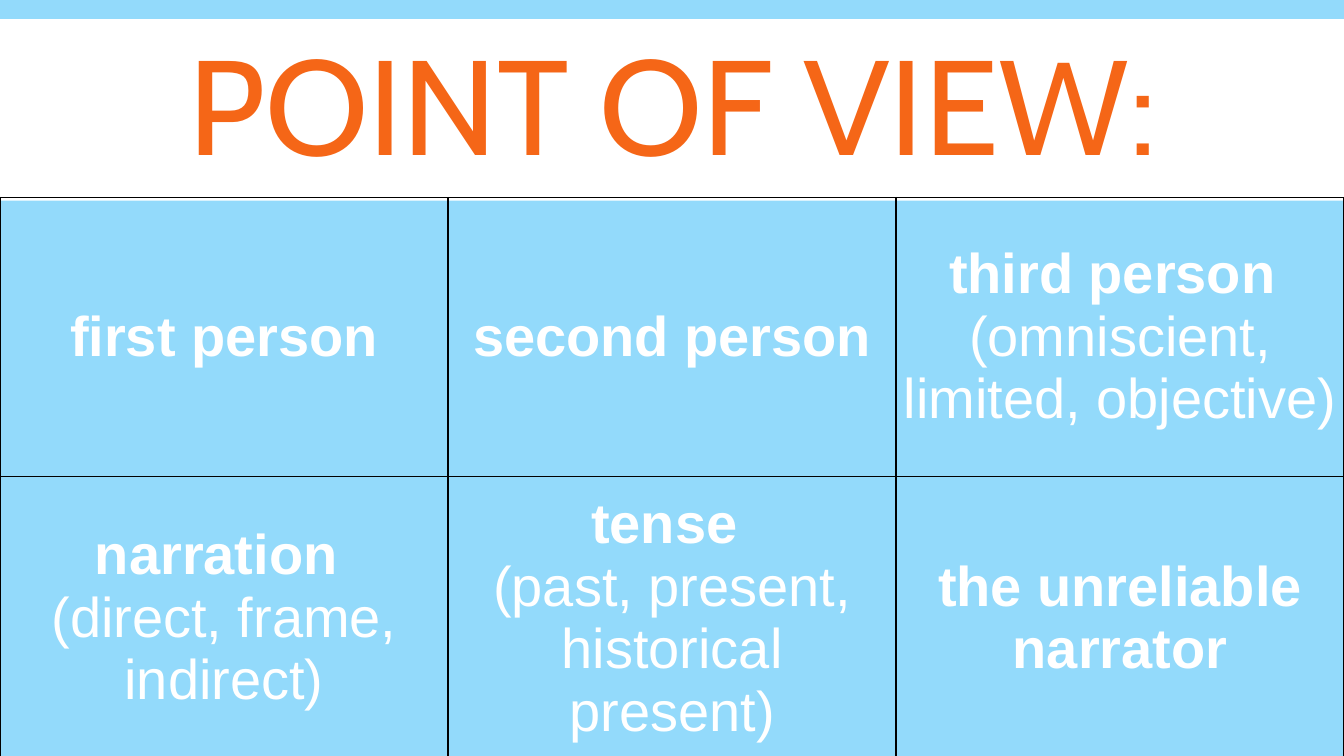
import pptx
import pptx.util
import pptx.dml.color
import pptx.enum.shapes
import pptx.enum.text
import pptx.oxml
import pptx.oxml.ns
from dataclasses import dataclass

# Content: each cell is a bold term and an optional detail
TITLE = "POINT OF VIEW:"
CELLS = [
    [("first person", ""), ("second person", ""),
     ("third person ", "(omniscient, limited, objective)")],
    [("narration ", "(direct, frame, indirect)"),
     ("tense ", "(past, present, historical present)"),
     ("the unreliable narrator", "")],
]


@dataclass(frozen=True)
class Theme:
    sky: str = "93DAFB"
    white: str = "FFFFFF"
    orange: str = "F56617"
    border: str = "000000"
    title_font: str = "Cabin"
    body_font: str = "Arial"
    title_size: int = 96
    body_size: int = 40


T = Theme()
W, H = 13.33, 7.5
BAND_TOP, BAND_H = 0.19, 1.8
TITLE_BOX = (1.32, 0.31, 10.7, 1.65)
GRID_TOP, ROW_H, CELL_PAD = 1.96, 2.77, 0.07
inch = pptx.util.Inches


def rgb(color):
    return pptx.dml.color.RGBColor.from_string(color)


def add_run(p, text, font, size, color, bold=False):
    r = p.add_run()
    r.text = text
    r.font.name, r.font.size, r.font.bold = font, pptx.util.Pt(size), bold
    r.font.color.rgb = rgb(color)


def set_borders(cell):
    tcPr = cell._tc.get_or_add_tcPr()
    ns = pptx.oxml.ns.nsdecls("a")
    for i, side in enumerate(("lnL", "lnR", "lnT", "lnB")):
        tcPr.insert(i, pptx.oxml.parse_xml(
            f'<a:{side} {ns} w="12700"><a:solidFill><a:srgbClr val="{T.border}"/>'
            f'</a:solidFill></a:{side}>'))


# Slide and background
prs = pptx.Presentation()
prs.slide_width, prs.slide_height = inch(W), inch(H)
s = prs.slides.add_slide(prs.slide_layouts[6])
s.background.fill.solid()
s.background.fill.fore_color.rgb = rgb(T.sky)

# White title band
band = s.shapes.add_shape(pptx.enum.shapes.MSO_SHAPE.RECTANGLE,
                          0, inch(BAND_TOP), inch(W), inch(BAND_H))
band.shadow.inherit = False
band.fill.solid()
band.fill.fore_color.rgb = rgb(T.white)
band.line.fill.background()

# Title
tf = s.shapes.add_textbox(*map(inch, TITLE_BOX)).text_frame
tf.word_wrap = True
tf.vertical_anchor = pptx.enum.text.MSO_ANCHOR.MIDDLE
p = tf.paragraphs[0]
p.alignment = pptx.enum.text.PP_ALIGN.CENTER
p.line_spacing = 0.85
add_run(p, TITLE, T.title_font, T.title_size, T.orange)

# Grid of terms
rows, cols = len(CELLS), len(CELLS[0])
table = s.shapes.add_table(rows, cols, 0, inch(GRID_TOP),
                           inch(W), inch(ROW_H * rows)).table
table.first_row = table.horz_banding = False
for col in table.columns:
    col.width = inch(W / cols)
for row, items in zip(table.rows, CELLS):
    row.height = inch(ROW_H)
    for cell, (term, detail) in zip(row.cells, items):
        cell.fill.background()
        set_borders(cell)
        cell.margin_left = cell.margin_right = inch(CELL_PAD)
        cell.margin_top = cell.margin_bottom = inch(CELL_PAD)
        cell.vertical_anchor = pptx.enum.text.MSO_ANCHOR.MIDDLE
        p = cell.text_frame.paragraphs[0]
        p.alignment = pptx.enum.text.PP_ALIGN.CENTER
        p.font.size = pptx.util.Pt(T.body_size)
        add_run(p, term, T.body_font, T.body_size, T.white, bold=True)
        if detail:
            p.add_line_break()
            add_run(p, detail, T.body_font, T.body_size, T.white)

prs.save("out.pptx")
